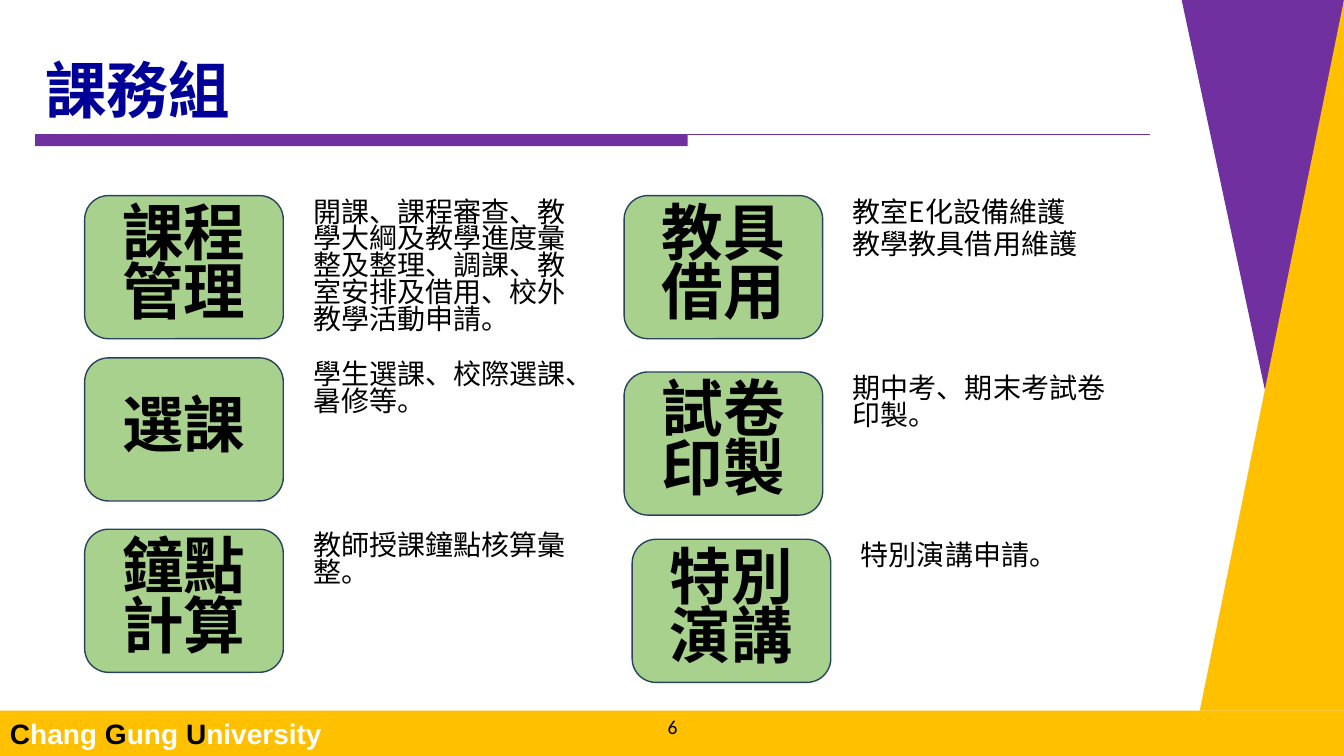
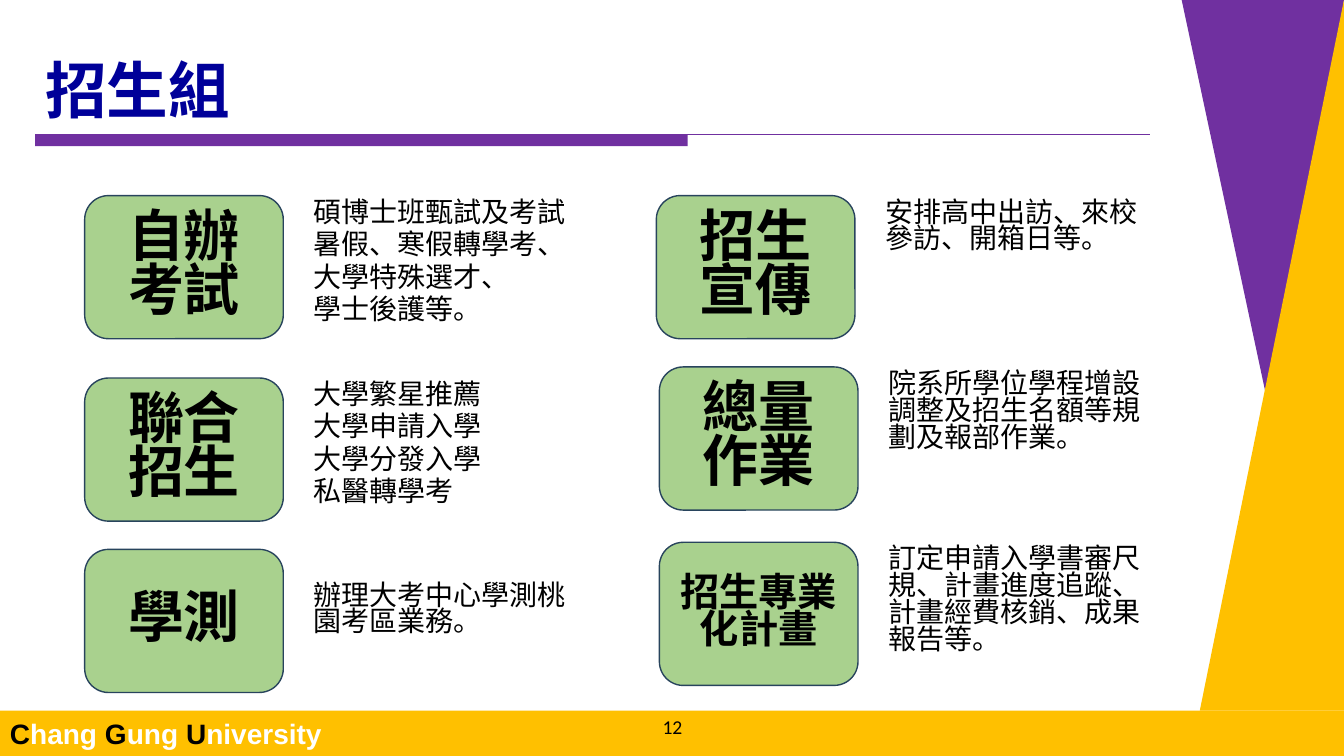
"""Build two department slides of labelled duty cards."""
from lxml.etree import SubElement
from pptx import Presentation
from pptx.dml.color import RGBColor
from pptx.enum.shapes import MSO_CONNECTOR as Connector, MSO_SHAPE as Shape
from pptx.enum.text import MSO_ANCHOR as Anchor, PP_ALIGN as Align
from pptx.oxml.ns import qn
from pptx.util import Inches, Pt

WIDTH, HEIGHT = 13.33, 7.5
PURPLE, GOLD, GREEN = "7030A0", "FFC000", "A9D18E"
OUTLINE, NAVY, BLACK, WHITE = "28445D", "000099", "000000", "FFFFFF"
CJK, LATIN, FOOTER_FONT = "Noto Sans CJK SC", "Calibri", "Arial"
CARD_W, CARD_H = 1.97, 1.42
DUTY_W, DUTY_SHIFT = 2.87, 2.17
LEFT_COLUMN, FIRST_ROW = 0.84, 1.94
RULE_LEFT, RULE_TOP, RULE_W, BAR_W, BAR_H = 0.35, 1.33, 11.06, 6.47, 0.12
BAND_TOP = 7.05

SIDE_PANELS = [
    (PURPLE, [(WIDTH, 0), (11.72, 0), (12.67, 4.45)]),
    (GOLD, [(WIDTH, 0), (11.9, BAND_TOP), (WIDTH, BAND_TOP)]),
]
UNIVERSITY = [("C", BLACK), ("hang ", WHITE), ("G", BLACK), ("ung ", WHITE),
              ("U", BLACK), ("niversity", WHITE)]

DEPARTMENTS = [
    {"title": "課務組", "page": "6", "label_size": 44, "cards": [
        (LEFT_COLUMN, FIRST_ROW, "課程管理",
         ["開課、課程審查、教學大綱及教學進度彙整及整理、調課、教室安排及借用、校外教學活動申請。"]),
        (LEFT_COLUMN, 3.55, "選課", ["學生選課、校際選課、暑修等。"]),
        (LEFT_COLUMN, 5.25, "鐘點計算", ["教師授課鐘點核算彙整。"]),
        (6.19, FIRST_ROW, "教具借用", ["教室E化設備維護", "教學教具借用維護"]),
        (6.19, 3.69, "試卷印製", ["期中考、期末考試卷印製。"]),
        (6.27, 5.35, "特別演講", ["特別演講申請。"]),
    ]},
    {"title": "招生組", "page": "12", "label_size": 40, "cards": [
        (LEFT_COLUMN, FIRST_ROW, "自辦考試",
         ["碩博士班甄試及考試", "暑假、寒假轉學考、", "大學特殊選才、", "學士後護等。"]),
        (LEFT_COLUMN, 3.75, "聯合招生",
         ["大學繁星推薦", "大學申請入學", "大學分發入學", "私醫轉學考"]),
        (LEFT_COLUMN, 5.45, "學測", ["辦理大考中心學測桃園考區業務。"]),
        (6.51, FIRST_ROW, "招生宣傳", ["安排高中出訪、來校參訪、開箱日等。"]),
        (6.54, 3.64, "總量作業", ["院系所學位學程增設調整及招生名額等規劃及報部作業。"]),
        (6.54, 5.38, "招生專業化計畫",
         ["訂定申請入學書審尺規、計畫進度追蹤、計畫經費核銷、成果報告等。"]),
    ]},
]
SMALL_LABELS = {"招生專業化計畫": 28}
DUTY_DROPS = {"學測": 0.29}


def color(value):
    return RGBColor.from_string(value)


def box(left, top, width, height):
    return [Inches(length) for length in (left, top, width, height)]


def paint(shape, fill, outline=None):
    shape.shadow.inherit = False
    shape.fill.solid()
    shape.fill.fore_color.rgb = color(fill)
    if outline:
        shape.line.color.rgb = color(outline)
        shape.line.width = Pt(1)
    else:
        shape.line.fill.background()
    return shape


def write(shape, paragraphs, size, font, bold=False, align=Align.LEFT,
          anchor=Anchor.TOP, spacing=1.0):
    frame = shape.text_frame
    frame.word_wrap = True
    frame.vertical_anchor = anchor
    for index, runs in enumerate(paragraphs):
        paragraph = frame.add_paragraph() if index else frame.paragraphs[0]
        paragraph.alignment = align
        paragraph.line_spacing = spacing
        if index:
            paragraph.space_before = Pt(size * 0.2)
        for text, ink in runs:
            run = paragraph.add_run()
            run.text = text
            run.font.size = Pt(size)
            run.font.name = font
            run.font.bold = bold
            run.font.color.rgb = color(ink)
            SubElement(run.font._element, qn("a:ea"), typeface=LATIN)


def add_frame(slide, title, page):
    shapes = slide.shapes
    for fill, corners in SIDE_PANELS:
        points = [(Inches(x), Inches(y)) for x, y in corners]
        outline = shapes.build_freeform(*points[0])
        outline.add_line_segments(points[1:], close=True)
        paint(outline.convert_to_shape(), fill)

    band = paint(shapes.add_shape(
        Shape.RECTANGLE, *box(0, BAND_TOP, WIDTH, HEIGHT - BAND_TOP)), GOLD)
    write(band, [UNIVERSITY], 20, FOOTER_FONT, bold=True, anchor=Anchor.MIDDLE)

    paint(shapes.add_shape(
        Shape.RECTANGLE, *box(RULE_LEFT, RULE_TOP, BAR_W, BAR_H)), PURPLE)
    rule = shapes.add_connector(
        Connector.STRAIGHT,
        *box(RULE_LEFT, RULE_TOP, RULE_LEFT + RULE_W, RULE_TOP))
    rule.line.color.rgb = color(PURPLE)
    rule.line.width = Pt(0.75)
    SubElement(rule._element.spPr, qn("a:effectLst"))

    heading = shapes.add_textbox(*box(RULE_LEFT, 0.4, RULE_W, 0.91))
    write(heading, [[(title, NAVY)]], 44, CJK, bold=True,
          anchor=Anchor.BOTTOM, spacing=0.9)
    number = shapes.add_textbox(*box(5.29, 7.07, 2.76, 0.28))
    write(number, [[(page, BLACK)]], 14, LATIN, align=Align.CENTER,
          anchor=Anchor.MIDDLE)


def add_card(slide, left, top, label, duties, label_size):
    card = paint(slide.shapes.add_shape(
        Shape.ROUNDED_RECTANGLE, *box(left, top, CARD_W, CARD_H)),
        GREEN, OUTLINE)
    write(card, [[(label, BLACK)]], SMALL_LABELS.get(label, label_size), LATIN,
          bold=True, align=Align.CENTER, anchor=Anchor.MIDDLE, spacing=0.8)
    duty_top = top + DUTY_DROPS.get(label, 0)
    duty = slide.shapes.add_textbox(
        *box(left + DUTY_SHIFT, duty_top, DUTY_W, CARD_H))
    write(duty, [[(line, BLACK)] for line in duties], 20, CJK, spacing=0.8)


def main():
    deck = Presentation()
    deck.slide_width, deck.slide_height = Inches(WIDTH), Inches(HEIGHT)
    for department in DEPARTMENTS:
        slide = deck.slides.add_slide(deck.slide_layouts[6])
        add_frame(slide, department["title"], department["page"])
        for card in department["cards"]:
            add_card(slide, *card, department["label_size"])
    deck.save("out.pptx")


if __name__ == "__main__":
    main()
